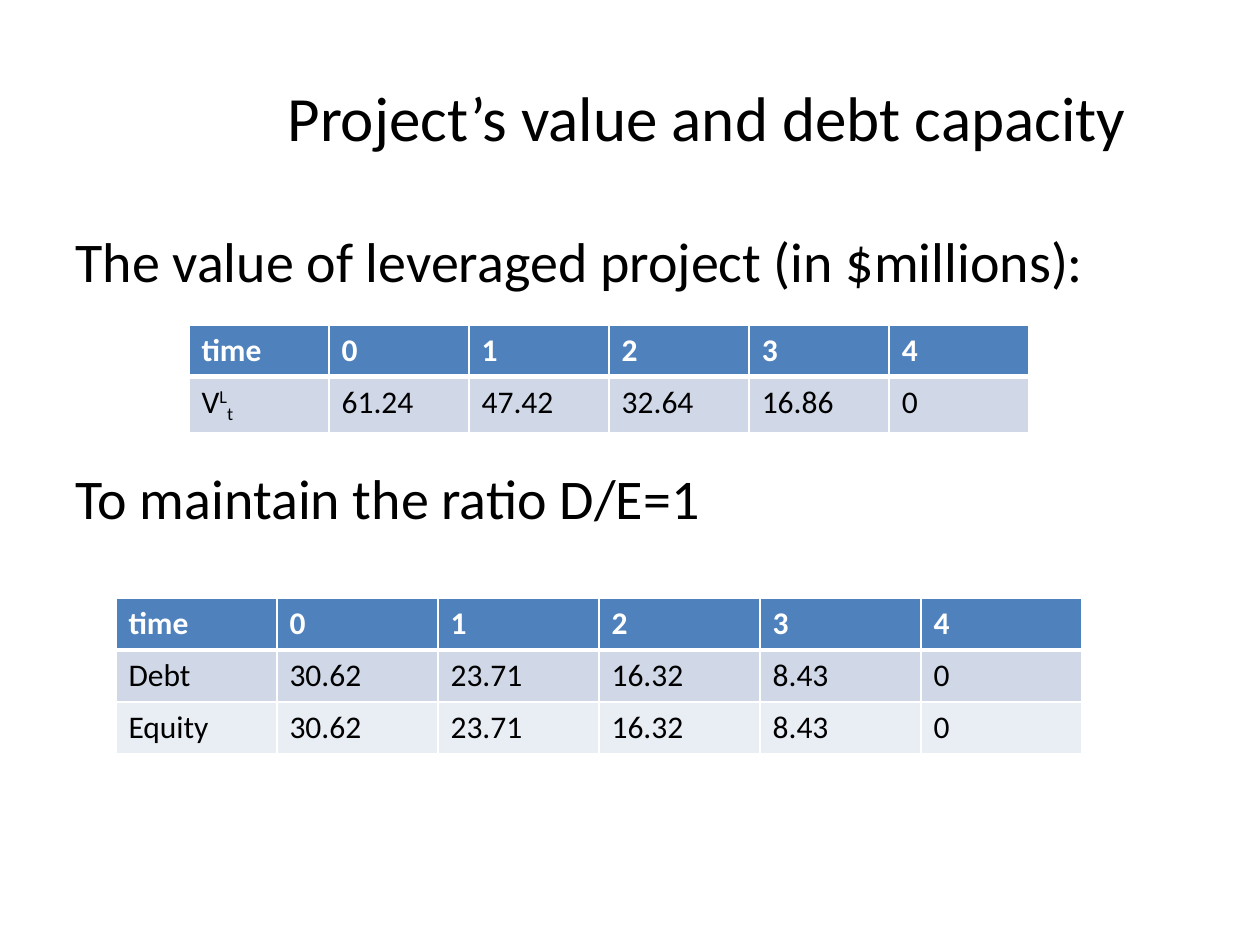
from lxml.etree import SubElement
from pptx import Presentation
from pptx.dml.color import RGBColor
from pptx.enum.text import MSO_ANCHOR, PP_ALIGN
from pptx.oxml.ns import qn
from pptx.util import Inches, Pt

FONT = "Calibri"
BLACK, WHITE = "000000", "FFFFFF"
ROW_FILLS = ["4F81BD", "D0D8E8", "E9EDF4"]
ROW_HEIGHT = 0.41
SUPERSCRIPT, SUBSCRIPT = 30000, -25000

TITLE = "Project’s value and debt capacity "
# (text, points of space before)
STATEMENTS = [
    ("The value of leveraged project (in $millions):", 0),
    ("To maintain the ratio D/E=1", 97),
]
HEADER = ["time", "0", "1", "2", "3", "4"]
LEVERAGED_VALUE = [("V", 0), ("L", SUPERSCRIPT), ("t", SUBSCRIPT)]
# A cell is a string or a list of (text, baseline shift)
TABLES = [
    {"left": 1.5, "top": 2.58, "width": 6.67, "rows": [
        HEADER,
        [LEVERAGED_VALUE, "61.24", "47.42", "32.64", "16.86", "0"],
    ]},
    {"left": 0.92, "top": 4.75, "width": 7.67, "rows": [
        HEADER,
        ["Debt", "30.62", "23.71", "16.32", "8.43", "0"],
        ["Equity", "30.62", "23.71", "16.32", "8.43", "0"],
    ]},
]


def rgb(color):
    return RGBColor.from_string(color)


def set_font(paragraph, size, color=BLACK, bold=False):
    font = paragraph.font
    font.name, font.size, font.bold = FONT, Pt(size), bold
    font.color.rgb = rgb(color)


def add_text_frame(slide, left, top, width, height):
    box = slide.shapes.add_textbox(*map(Inches, (left, top, width, height)))
    box.text_frame.word_wrap = True
    return box.text_frame


def set_borders(cell, row):
    """Draw thin white borders, with a thick one under the header."""
    properties = cell._tc.get_or_add_tcPr()
    top = 3 if row == 1 else 1
    bottom = 3 if row == 0 else 1
    for side, width in (("L", 1), ("R", 1), ("T", top), ("B", bottom)):
        line = SubElement(properties, qn(f"a:ln{side}"), w=str(Pt(width)))
        fill = SubElement(line, qn("a:solidFill"))
        SubElement(fill, qn("a:srgbClr"), val=WHITE)


def fill_cell(cell, content, row):
    set_borders(cell, row)
    cell.fill.solid()
    cell.fill.fore_color.rgb = rgb(ROW_FILLS[row])
    paragraph = cell.text_frame.paragraphs[0]
    set_font(paragraph, 18, BLACK if row else WHITE, bold=row == 0)
    parts = [(content, 0)] if isinstance(content, str) else content
    for text, baseline in parts:
        run = paragraph.add_run()
        run.text = text
        if baseline:
            run._r.get_or_add_rPr().set("baseline", str(baseline))


def add_value_table(slide, left, top, width, rows):
    size = map(Inches, (left, top, width, ROW_HEIGHT * len(rows)))
    table = slide.shapes.add_table(len(rows), len(HEADER), *size).table
    for column in table.columns:
        column.width = Inches(width / len(HEADER))
    for row, contents in enumerate(rows):
        for column, content in enumerate(contents):
            fill_cell(table.cell(row, column), content, row)


def main():
    presentation = Presentation()
    presentation.slide_width, presentation.slide_height = Inches(10), Inches(7.5)
    slide = presentation.slides.add_slide(presentation.slide_layouts[6])

    title = add_text_frame(slide, 1.83, 0.3, 7.67, 1.25)
    title.vertical_anchor = MSO_ANCHOR.MIDDLE
    title.text = TITLE
    title.paragraphs[0].alignment = PP_ALIGN.CENTER
    set_font(title.paragraphs[0], 36)

    body = add_text_frame(slide, 0.5, 1.75, 9, 5.17)
    body.text = "\n".join(text for text, _ in STATEMENTS)
    for paragraph, (_, space) in zip(body.paragraphs, STATEMENTS):
        paragraph.space_before = Pt(space)
        set_font(paragraph, 32)

    for table in TABLES:
        add_value_table(slide, **table)
    presentation.save("out.pptx")


if __name__ == "__main__":
    main()
